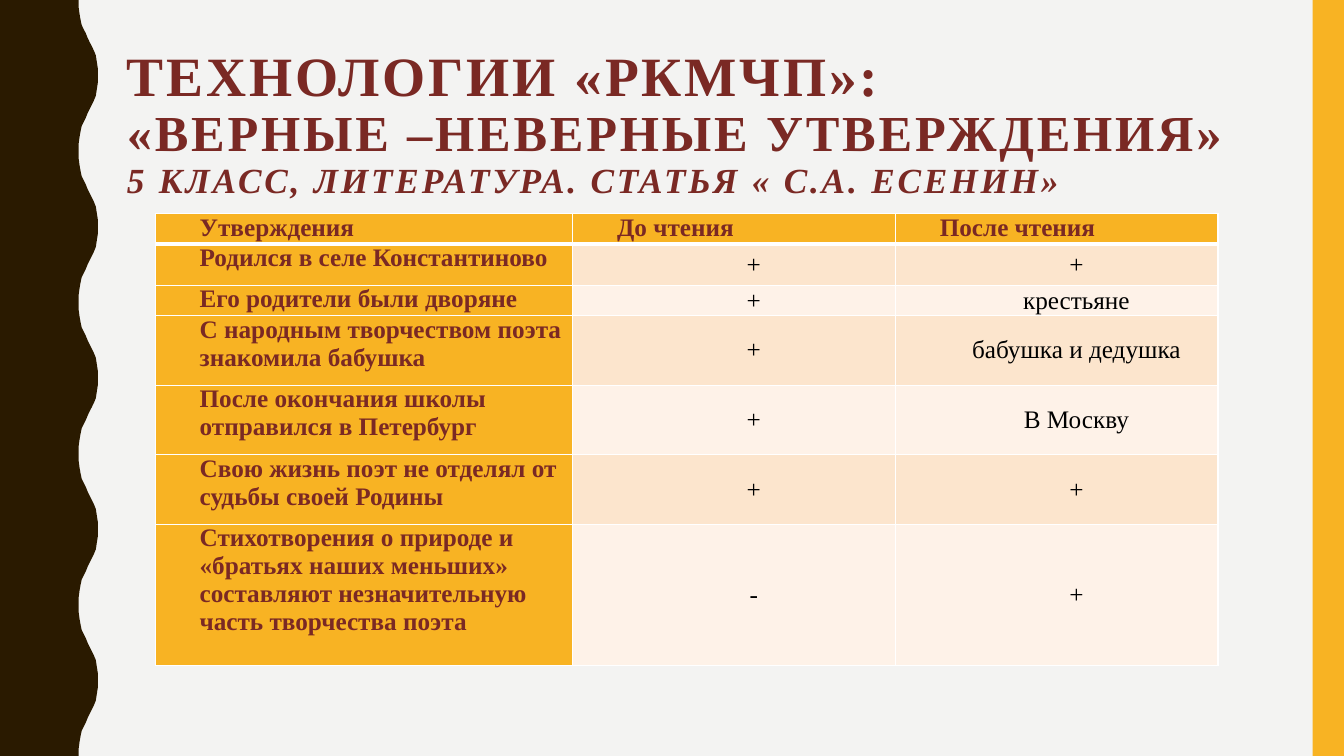
import pptx
import pptx.dml.color
import pptx.enum.shapes
import pptx.enum.text
import pptx.util
import pptx.oxml
import pptx.oxml.ns
from pptx.enum.text import MSO_ANCHOR, PP_ALIGN

# Lengths are percentages of the slide's width (across) and height (down).
WAVE_COUNT = 5
HALF_WAVE = [(5.85, 0), (5.85, 0.93), (5.92, 1.87), (6, 2.67), (6.08, 3.33),
             (6.23, 3.87), (6.38, 4.4), (6.53, 5.07), (6.68, 5.6), (6.83, 6.13),
             (6.98, 6.67), (7.13, 7.33), (7.2, 8.13), (7.28, 9.07), (7.28, 10)]

TITLE = [("ТЕХНОЛОГИИ «РКМЧП»:", 39.6, False),
         ("«ВЕРНЫЕ –НЕВЕРНЫЕ УТВЕРЖДЕНИЯ»", 36, False),
         ("5 КЛАСС, ЛИТЕРАТУРА. СТАТЬЯ « С.А. ЕСЕНИН»", 25.2, True)]

STATEMENTS = [
    ("Утверждения", "До чтения", "После чтения"),
    ("Родился в селе Константиново", "+", "+"),
    ("Его родители были дворяне", "+", "крестьяне"),
    ("С народным творчеством поэта знакомила бабушка", "+", "бабушка и дедушка"),
    ("После окончания школы отправился в Петербург", "+", "В Москву"),
    ("Свою жизнь поэт не отделял от судьбы своей Родины", "+", "+"),
    ("Стихотворения о природе и «братьях наших меньших» составляют "
     "незначительную часть творчества поэта", "-", "+"),
]
COLUMN_WIDTHS = [31.06, 24.01, 24.01]
ROW_HEIGHTS = [3.73, 5.47, 3.73, 9.2, 9.2, 9.2, 18.67]


def colour(code):
    return pptx.dml.color.RGBColor.from_string(code)


class SlideMaker:
    font = "Times New Roman"
    paper, dark, amber = "F3F3F2", "2A1A00", "F8B323"
    heading, body, rule = "7A2924", "000000", "FFFFFF"
    bands = ["FEF2E8", "FCE5CD"]

    def __init__(self):
        self.deck = pptx.Presentation()
        self.deck.slide_width = pptx.util.Inches(13.33)
        self.deck.slide_height = pptx.util.Inches(7.5)
        self.page = self.deck.slides.add_slide(self.deck.slide_layouts[6])
        self.page.background.fill.solid()
        self.page.background.fill.fore_color.rgb = colour(self.paper)

    def across(self, share):
        return round(self.deck.slide_width * share / 100)

    def down(self, share):
        return round(self.deck.slide_height * share / 100)

    def place(self, left, top, width, height):
        return self.across(left), self.down(top), self.across(width), self.down(height)

    def paint(self, shape, code):
        shape.shadow.inherit = False
        shape.fill.solid()
        shape.fill.fore_color.rgb = colour(code)
        shape.line.fill.background()

    def bar(self, *area):
        kind = pptx.enum.shapes.MSO_SHAPE.RECTANGLE
        self.paint(self.page.shapes.add_shape(kind, *self.place(*area)), self.amber)

    def wavy_edge(self):
        period = 2 * HALF_WAVE[-1][1]
        returning = [(x, period - y) for x, y in reversed(HALF_WAVE[:-1])]
        wave = HALF_WAVE + returning
        points = [(x, y + period * number) for number in range(WAVE_COUNT) for x, y in wave]
        points.append((0, 100))
        builder = self.page.shapes.build_freeform(0, 0)
        builder.add_line_segments([(self.across(x), self.down(y)) for x, y in points])
        self.paint(builder.convert_to_shape(), self.dark)

    def title(self, lines, *area):
        box = self.page.shapes.add_textbox(*self.place(*area))
        frame = box.text_frame
        frame.word_wrap = True
        frame.vertical_anchor = MSO_ANCHOR.MIDDLE
        para = frame.paragraphs[0]
        para.line_spacing = 0.9
        for number, (text, size, italic) in enumerate(lines):
            if number:
                para.add_line_break()
            span = para.add_run()
            span.text = text
            span.font.size = pptx.util.Pt(size)
            span.font.italic = italic
            span.font.bold = True
            span.font.name = self.font
            span.font.color.rgb = colour(self.heading)
            span._r.get_or_add_rPr().set("spc", "200")

    def borders(self, cell, **widths):
        properties = cell._tc.get_or_add_tcPr()
        for position, (side, points) in enumerate(widths.items()):
            line = pptx.oxml.parse_xml(
                f'<a:{side} {pptx.oxml.ns.nsdecls("a")} w="{pptx.util.Pt(points)}">'
                f'<a:solidFill><a:srgbClr val="{self.rule}"/></a:solidFill></a:{side}>')
            properties.insert(position, line)

    def cell(self, cell, text, row, column):
        is_label = row == 0 or column == 0
        cell.margin_left = cell.margin_right = pptx.util.Inches(0.05)
        cell.margin_top = cell.margin_bottom = 0
        cell.vertical_anchor = MSO_ANCHOR.TOP if is_label else MSO_ANCHOR.MIDDLE
        cell.fill.solid()
        cell.fill.fore_color.rgb = colour(self.amber if is_label else self.bands[row % 2])
        self.borders(cell, lnL=1, lnR=1, lnT=3 if row == 1 else 1, lnB=3 if row == 0 else 1)
        cell.text = text
        para = cell.text_frame.paragraphs[0]
        para._p.get_or_add_pPr().set("marL", str(self.across(2.93)))
        para.alignment = PP_ALIGN.LEFT if is_label else PP_ALIGN.CENTER
        para.font.name = self.font
        para.font.size = pptx.util.Pt(18)
        para.font.bold = is_label
        para.font.color.rgb = colour(self.heading if is_label else self.body)

    def table(self, rows, widths, heights, left, top):
        area = self.place(left, top, sum(widths), sum(heights))
        table = self.page.shapes.add_table(len(rows), len(widths), *area).table
        table.first_row = table.horz_banding = False
        for column, width in zip(table.columns, widths):
            column.width = self.across(width)
        for row, height in zip(table.rows, heights):
            row.height = self.down(height)
        for row, texts in enumerate(rows):
            for column, text in enumerate(texts):
                self.cell(table.cell(row, column), text, row, column)


def main():
    maker = SlideMaker()
    # Side decoration
    maker.wavy_edge()
    maker.bar(97.67, 0, 2.33, 100)
    # Heading and table of statements
    maker.title(TITLE, 8.7, 5.6, 85.07, 21.73)
    maker.table(STATEMENTS, COLUMN_WIDTHS, ROW_HEIGHTS, 11.55, 28.27)
    maker.deck.save("out.pptx")


if __name__ == "__main__":
    main()
